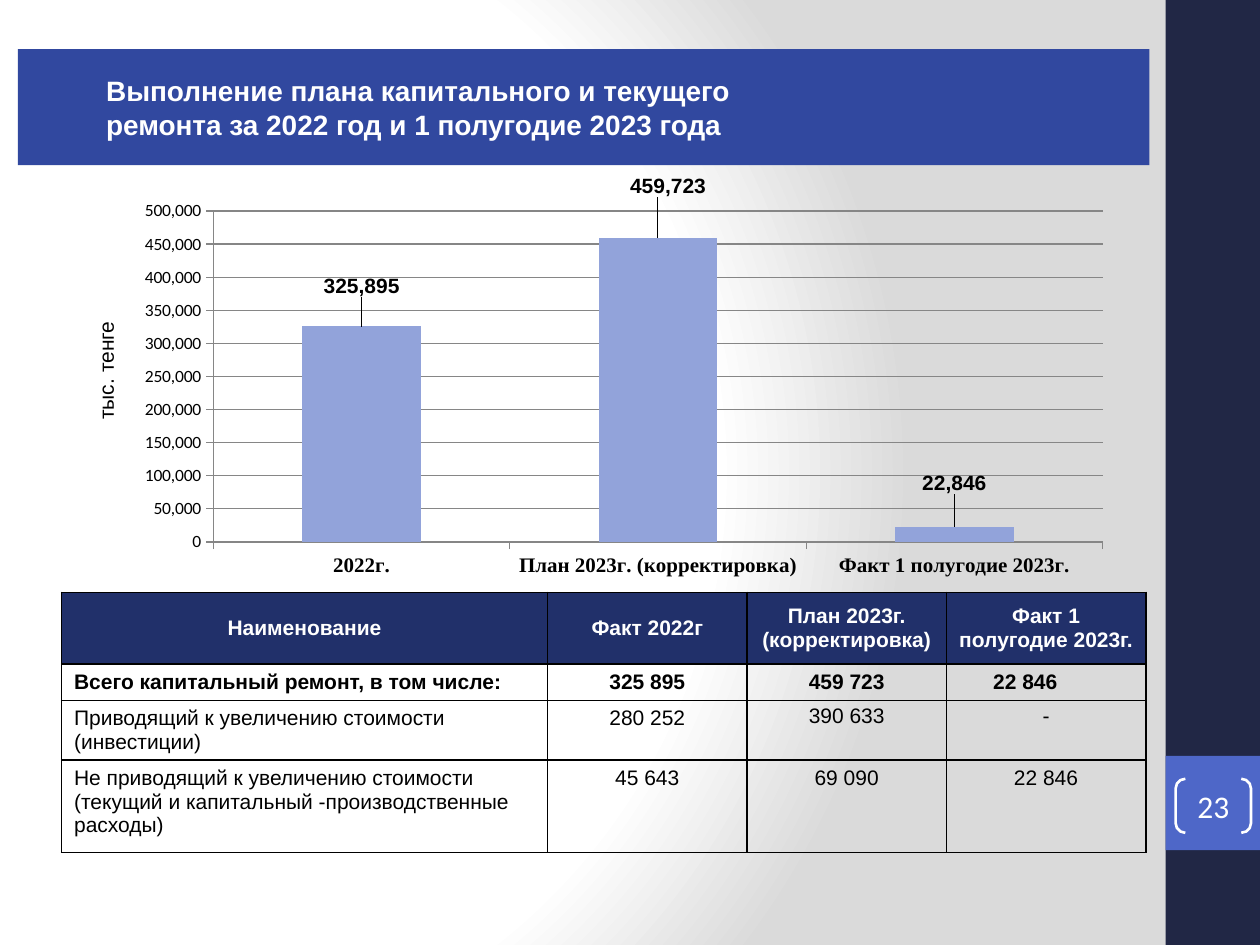
from dataclasses import dataclass

from lxml.etree import SubElement
from pptx import Presentation
from pptx.chart.data import CategoryChartData
from pptx.dml.color import RGBColor
from pptx.enum.chart import XL_CHART_TYPE, XL_LABEL_POSITION, XL_TICK_MARK
from pptx.enum.shapes import MSO_SHAPE
from pptx.enum.text import MSO_ANCHOR, MSO_AUTO_SIZE, PP_ALIGN
from pptx.oxml import parse_xml
from pptx.oxml.ns import nsdecls, qn
from pptx.util import Cm, Pt

# Content
TITLE = ["Выполнение плана капитального и текущего",
         "ремонта за 2022 год и 1 полугодие 2023 года"]
UNIT = "тыс. тенге"
PAGE_NUMBER = "23"
BARS = [  # category, value, label shift as a share of the chart (x, y)
    ("2022г.", 325895, (0, -0.06)),
    ("План 2023г. (корректировка)", 459723, (0.01, -0.09)),
    ("Факт 1 полугодие 2023г.", 22846, (0, -0.07)),
]
TABLE = [
    ["Наименование", "Факт 2022г", "План 2023г. (корректировка)",
     "Факт 1 полугодие 2023г."],
    ["Всего капитальный ремонт, в том числе:", "325 895", "459 723", "22 846"],
    ["Приводящий к увеличению стоимости (инвестиции)", "280 252", "390 633", "-"],
    ["Не приводящий к увеличению стоимости (текущий и капитальный "
     "-производственные расходы)", "45 643", "69 090", "22 846"],
]
COLUMN_WIDTHS = [9.8, 4.02, 4.02, 4.02]
ROW_HEIGHTS = [1.45, 0.73, 1.19, 1.86]
INDENTED_CELL = (1, 3)
TIGHT_CELLS = [(2, 2), (2, 3)]


@dataclass
class Theme:
    sans: str = "Arial"
    plain: str = "Calibri"
    serif: str = "Times New Roman"
    white: str = "FFFFFF"
    black: str = "000000"
    shade: str = "DADADA"
    strip: str = "212745"
    badge: str = "4E67C8"
    banner: str = "31489F"
    header: str = "21306A"
    bar: str = "92A3DA"
    grid: str = "868686"
    title: int = 16
    number: int = 18
    body: int = 12
    axis: int = 10


theme = Theme()


def color(code):
    return RGBColor.from_string(code)


def style(font, name, size, code, bold=False):
    font.name, font.size, font.bold = name, Pt(size), bold
    font.color.rgb = color(code)


def set_margins(target, side, end):
    target.margin_left = target.margin_right = Cm(side)
    target.margin_top = target.margin_bottom = Cm(end)


def indent(para, length):
    para._p.get_or_add_pPr().set("marL", str(Cm(length)))


def add_block(page, kind, place, fill=None):
    block = page.shapes.add_shape(kind, *map(Cm, place))
    block.shadow.inherit = False
    block.line.fill.background()
    if fill:
        block.fill.solid()
        block.fill.fore_color.rgb = color(fill)
    else:
        block.fill.background()
    return block


def paint_background(page):
    page.background.fill.solid()
    holder = page.background._cSld.bg.bgPr
    stops = "".join(
        f'<a:gs pos="{pos}000"><a:srgbClr val="{code}"/></a:gs>'
        for pos, code in [(0, theme.white), (75, theme.white), (100, theme.shade)])
    holder.replace(holder[0], parse_xml(
        f'<a:gradFill {nsdecls("a")} rotWithShape="1"><a:gsLst>{stops}</a:gsLst>'
        '<a:path path="circle"><a:fillToRect l="20000" t="50000" r="100000" '
        'b="50000"/></a:path></a:gradFill>'))


def add_side_strip(page):
    add_block(page, MSO_SHAPE.RECTANGLE, (23.5, 0, 1.9, 19.05), theme.strip)
    add_block(page, MSO_SHAPE.RECTANGLE, (23.5, 15.24, 1.9, 1.9), theme.badge)
    bracket = add_block(page, MSO_SHAPE.DOUBLE_BRACKET, (23.7, 15.7, 1.52, 1.09))
    bracket.adjustments[0] = 0.18
    bracket.line.color.rgb = color(theme.white)
    bracket.line.width = Pt(1.5)
    frame = bracket.text_frame
    set_margins(frame, 0, 0)
    frame.vertical_anchor = MSO_ANCHOR.MIDDLE
    para = frame.paragraphs[0]
    para.text = PAGE_NUMBER
    para.alignment = PP_ALIGN.CENTER
    style(para.font, theme.plain, theme.number, theme.white)


def fill_title(page):
    banner = page.shapes.title
    banner.left, banner.top, banner.width, banner.height = map(
        Cm, (0.36, 0.99, 22.81, 2.34))
    banner._element.spPr.append(parse_xml(
        f'<a:prstGeom {nsdecls("a")} prst="snip2DiagRect"><a:avLst>'
        '<a:gd name="adj1" fmla="val 0"/><a:gd name="adj2" fmla="val 50000"/>'
        '</a:avLst></a:prstGeom>'))
    banner.fill.solid()
    banner.fill.fore_color.rgb = color(theme.banner)
    frame = banner.text_frame
    frame.text = "\n".join(TITLE)
    frame.auto_size = MSO_AUTO_SIZE.NONE
    frame.vertical_anchor = MSO_ANCHOR.MIDDLE
    set_margins(frame, 0.18, 0.1)
    for para in frame.paragraphs:
        para.alignment = PP_ALIGN.LEFT
        para.space_before = Pt(0)
        indent(para, 1.6)
        style(para.font, theme.sans, theme.title, theme.white, True)


def add_unit(page):
    box = page.shapes.add_textbox(*map(Cm, (0.43, 6.63, 3.4, 0.76)))
    box.rotation = 270
    box.text_frame.word_wrap = True
    para = box.text_frame.paragraphs[0]
    para.text = UNIT
    style(para.font, theme.sans, theme.body, theme.black)


def manual_layout(**parts):
    inner = "".join(f'<c:{key} val="{value}"/>' for key, value in parts.items())
    return parse_xml(f'<c:layout {nsdecls("c")}><c:manualLayout>{inner}'
                     '</c:manualLayout></c:layout>')


def add_bars(page):
    data = CategoryChartData(number_format="#,##0")
    data.categories = [name for name, _, _ in BARS]
    data.add_series("Series 1", [value for _, value, _ in BARS])
    chart = page.shapes.add_chart(XL_CHART_TYPE.COLUMN_CLUSTERED,
                                  *map(Cm, (2.49, 3.53, 20.14, 8.2)), data).chart
    chart.has_legend = chart.has_title = False
    style(chart.font, theme.plain, theme.axis, theme.black)
    area = chart._chartSpace.chart.plotArea
    for old in area.findall(qn("c:layout")):
        area.remove(old)
    area.insert(0, manual_layout(layoutTarget="inner", xMode="edge", yMode="edge",
                                 x=0.09, y=0.07, w=0.89, h=0.83))
    # Axes
    values, categories = chart.value_axis, chart.category_axis
    values.minimum_scale, values.maximum_scale = 0, 500000
    values.major_unit = 50000
    values.tick_labels.number_format = "#,##0"
    values.tick_labels.number_format_is_linked = False
    style(categories.tick_labels.font, theme.serif, theme.body, theme.black, True)
    for axis in (values, categories):
        axis.major_tick_mark = XL_TICK_MARK.OUTSIDE
    for part in (values, categories, values.major_gridlines):
        part.format.line.color.rgb = color(theme.grid)
        part.format.line.width = Pt(0.75)
    # Columns and their labels
    plot = chart.plots[0]
    plot.gap_width = 150
    plot.vary_by_categories = False
    series = plot.series[0]
    series.format.fill.solid()
    series.format.fill.fore_color.rgb = color(theme.bar)
    for index, (_, _, (x, y)) in enumerate(BARS):
        label = series.points[index].data_label
        style(label.font, theme.sans, theme.body, theme.black, True)
        label.position = XL_LABEL_POSITION.OUTSIDE_END
        label._dLbl.insert(1, manual_layout(x=x, y=y))


def add_borders(cell):
    props = cell._tc.get_or_add_tcPr()
    for position, side in enumerate(("lnL", "lnR", "lnT", "lnB")):
        line = props.makeelement(qn(f"a:{side}"), {"w": str(Pt(1))})
        fill = SubElement(line, qn("a:solidFill"))
        SubElement(fill, qn("a:srgbClr"), val=theme.black)
        props.insert(position, line)


def add_figures(page):
    table = page.shapes.add_table(
        len(TABLE), len(TABLE[0]), Cm(1.24), Cm(11.94),
        Cm(sum(COLUMN_WIDTHS)), Cm(sum(ROW_HEIGHTS))).table
    table.first_row = table.horz_banding = False
    for column, width in zip(table.columns, COLUMN_WIDTHS):
        column.width = Cm(width)
    for r, (row, height) in enumerate(zip(TABLE, ROW_HEIGHTS)):
        table.rows[r].height = Cm(height)
        for c, text in enumerate(row):
            cell, header = table.cell(r, c), r == 0
            cell.text = text
            para = cell.text_frame.paragraphs[0]
            style(para.font, theme.sans, theme.body,
                  theme.white if header else theme.black, r < 2)
            if (r, c) == INDENTED_CELL:
                indent(para, 0.69)
            elif header or c > 0:
                para.alignment = PP_ALIGN.CENTER
            if (r, c) in TIGHT_CELLS:
                set_margins(cell, 0.25, 0.08)
            if header:
                cell.vertical_anchor = MSO_ANCHOR.MIDDLE
                cell.fill.solid()
                cell.fill.fore_color.rgb = color(theme.header)
            else:
                cell.fill.background()
            add_borders(cell)


def main():
    deck = Presentation()
    deck.slide_width, deck.slide_height = Cm(25.4), Cm(19.05)
    page = deck.slides.add_slide(deck.slide_layouts[5])
    paint_background(page)
    add_side_strip(page)
    add_figures(page)
    fill_title(page)
    add_unit(page)
    add_bars(page)
    deck.save("out.pptx")


if __name__ == "__main__":
    main()
